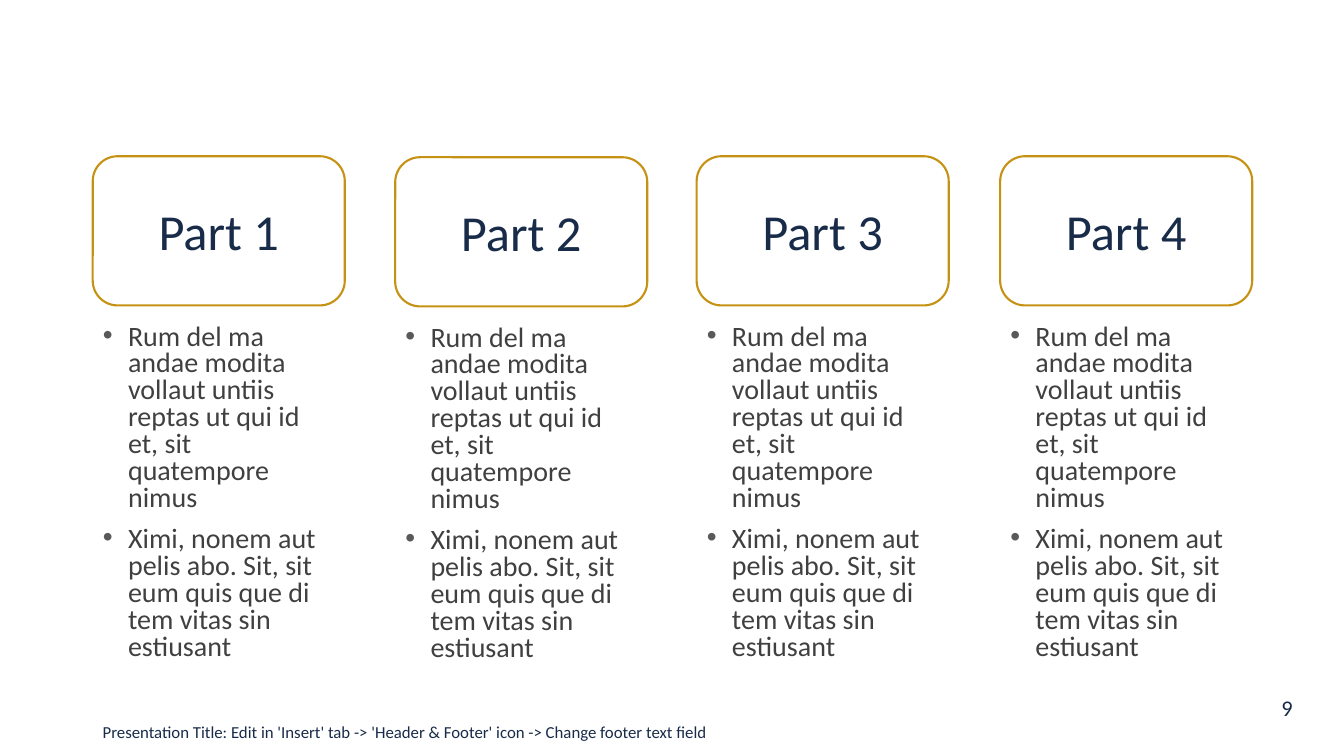
"""Build a slide with four outlined part cards, each above a bulleted list."""
from dataclasses import dataclass
from typing import Any

from lxml import etree
from pptx import Presentation
from pptx import util as u
from pptx.dml.color import RGBColor
from pptx.enum import shapes, text
from pptx.oxml.ns import qn


@dataclass(frozen=True)
class Theme:
    """Colours, typeface and type sizes."""
    navy: str = "182B49"
    gold: str = "C69214"
    body: str = "404040"
    bullet: str = "595959"
    typeface: str = "Calibri"
    heading_size: int = 36
    list_size: int = 20
    number_size: int = 16
    footer_size: int = 12


@dataclass(frozen=True)
class Part:
    """One column: its heading, top left corner and list items."""
    heading: str
    left: float
    top: float
    items: tuple[str, ...]


@dataclass(frozen=True)
class Label:
    """A single line of text in its own box."""
    wording: str
    box: tuple[float, float, float, float]
    size: int
    frame: dict[str, Any]
    alignment: text.PP_ALIGN = text.PP_ALIGN.LEFT


THEME = Theme()
ITEMS = (
    "Rum del ma andae modita vollaut untiis reptas ut qui id et, sit quatempore nimus",
    "Ximi, nonem aut pelis abo. Sit, sit eum quis que di tem vitas sin estiusant",
)
CORNERS = ((0.92, 1.55), (3.92, 1.56), (6.91, 1.55), (9.92, 1.55))
PARTS = [Part(f"Part {number}", left, top, ITEMS)
         for number, (left, top) in enumerate(CORNERS, 1)]
MIDDLE = {"word_wrap": True, "vertical_anchor": text.MSO_ANCHOR.MIDDLE}
HEADING_FRAME = {"word_wrap": False, "auto_size": text.MSO_AUTO_SIZE.SHAPE_TO_FIT_TEXT}
LIST_FRAME = {"word_wrap": True, "auto_size": text.MSO_AUTO_SIZE.NONE,
              "vertical_anchor": text.MSO_ANCHOR.TOP}
MARGIN_LABELS = (
    Label("Presentation Title: Edit in 'Insert' tab -> 'Header & Footer' icon"
          " -> Change footer text field",
          (0.92, 7.06, 8, 0.4), THEME.footer_size, MIDDLE),
    Label("9", (9.42, 6.82, 3.5, 0.4), THEME.number_size, MIDDLE, text.PP_ALIGN.RIGHT),
)


def apply(target: Any, values: dict[str, Any]) -> None:
    """Set each named attribute on the target."""
    for name, value in values.items():
        setattr(target, name, value)


def style_font(font: Any, size: int, colour: str) -> None:
    """Give a font the theme typeface, a size and a colour."""
    apply(font, {"name": THEME.typeface, "size": u.Pt(size), "bold": False})
    font.color.rgb = RGBColor.from_string(colour)


def add_label(slide: Any, label: Label) -> None:
    """Add a text box holding one line."""
    shape = slide.shapes.add_textbox(*map(u.Inches, label.box))
    apply(shape.text_frame, label.frame)
    paragraph = shape.text_frame.paragraphs[0]
    apply(paragraph, {"text": label.wording, "alignment": label.alignment})
    style_font(paragraph.runs[0].font, label.size, THEME.navy)


def add_bullet(paragraph: Any) -> None:
    """Give a paragraph a hanging indent and a round bullet."""
    properties = paragraph._p.get_or_add_pPr()
    properties.set("marL", str(u.Inches(0.25)))
    properties.set("indent", str(u.Inches(-0.25)))
    colour = etree.SubElement(properties, qn("a:buClr"))
    etree.SubElement(colour, qn("a:srgbClr"), val=THEME.bullet)
    etree.SubElement(properties, qn("a:buFont"), typeface="Arial")
    etree.SubElement(properties, qn("a:buChar"), char="•")


def fill_list(placeholder: Any, part: Part) -> None:
    """Move a body placeholder below its card and write the list."""
    apply(placeholder, {"left": u.Inches(part.left), "top": u.Inches(part.top + 1.62),
                        "width": u.Inches(2.5), "height": u.Inches(3.18)})
    frame = placeholder.text_frame
    apply(frame, LIST_FRAME)
    frame.text = "\n".join(part.items)
    for index, paragraph in enumerate(frame.paragraphs):
        add_bullet(paragraph)
        apply(paragraph, {"line_spacing": 0.8, "space_before": u.Pt(10 if index else 0),
                          "alignment": text.PP_ALIGN.LEFT})
        style_font(paragraph.runs[0].font, THEME.list_size, THEME.body)


def add_card(slide: Any, part: Part) -> None:
    """Add the rounded outline and the heading centred in it."""
    box = map(u.Inches, (part.left, part.top, 2.5, 1.48))
    card = slide.shapes.add_shape(shapes.MSO_SHAPE.ROUNDED_RECTANGLE, *box)
    card.shadow.inherit = False
    card.fill.background()
    card.line.color.rgb = RGBColor.from_string(THEME.gold)
    card.line.width = u.Pt(1.5)
    heading_box = (part.left + 0.55, part.top + 0.39, 1.4, 0.71)
    add_label(slide, Label(part.heading, heading_box, THEME.heading_size,
                           HEADING_FRAME, text.PP_ALIGN.CENTER))


def main() -> None:
    """Create the presentation and save it."""
    presentation = Presentation()
    apply(presentation, {"slide_width": u.Inches(13.33), "slide_height": u.Inches(7.5)})
    comparison_layout = presentation.slide_layouts[4]
    slide = presentation.slides.add_slide(comparison_layout)
    title, *lists = slide.placeholders
    title.element.getparent().remove(title.element)
    for placeholder, part in zip(lists, PARTS):
        fill_list(placeholder, part)
        add_card(slide, part)
    for label in MARGIN_LABELS:
        add_label(slide, label)
    presentation.save("out.pptx")


if __name__ == "__main__":
    main()
